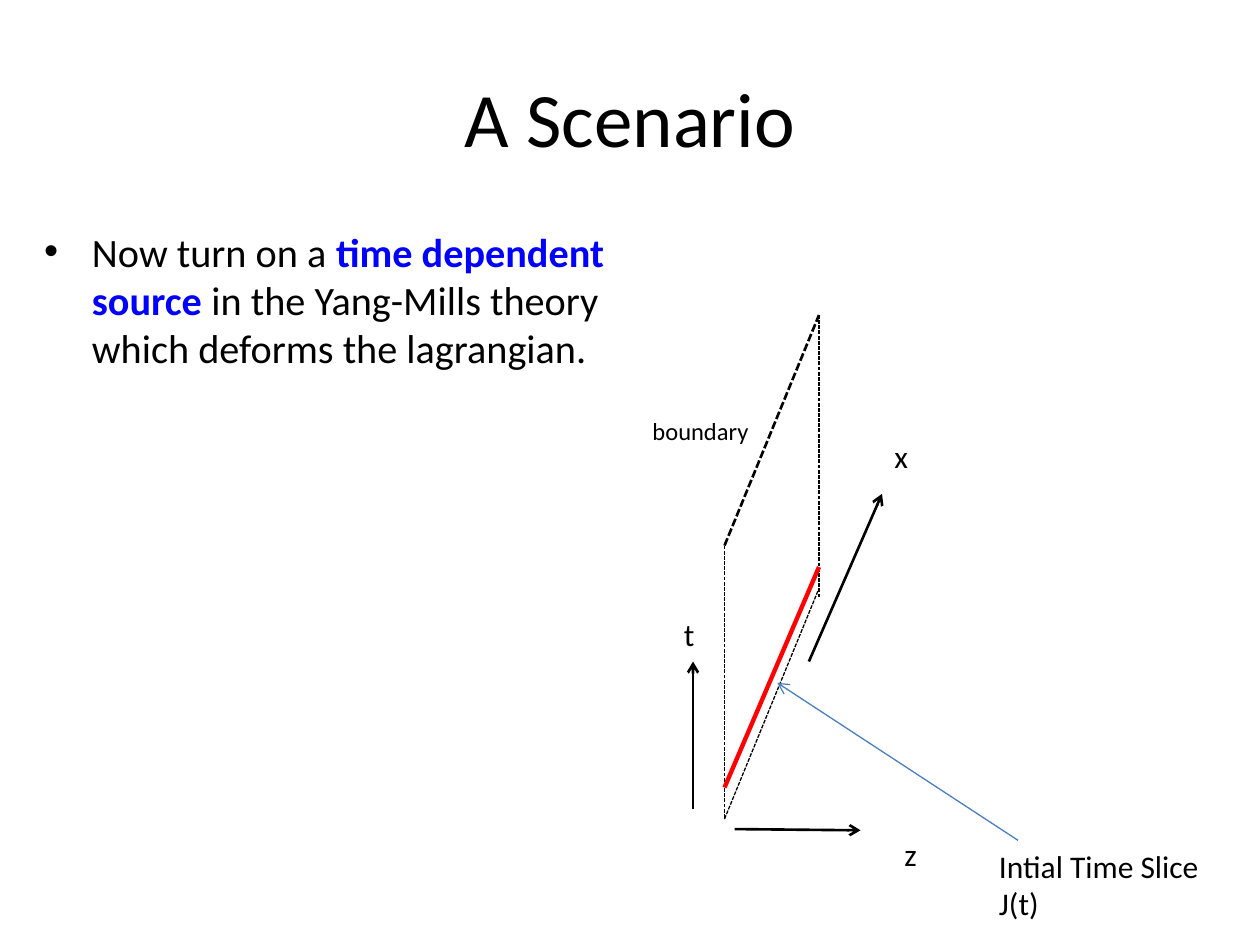
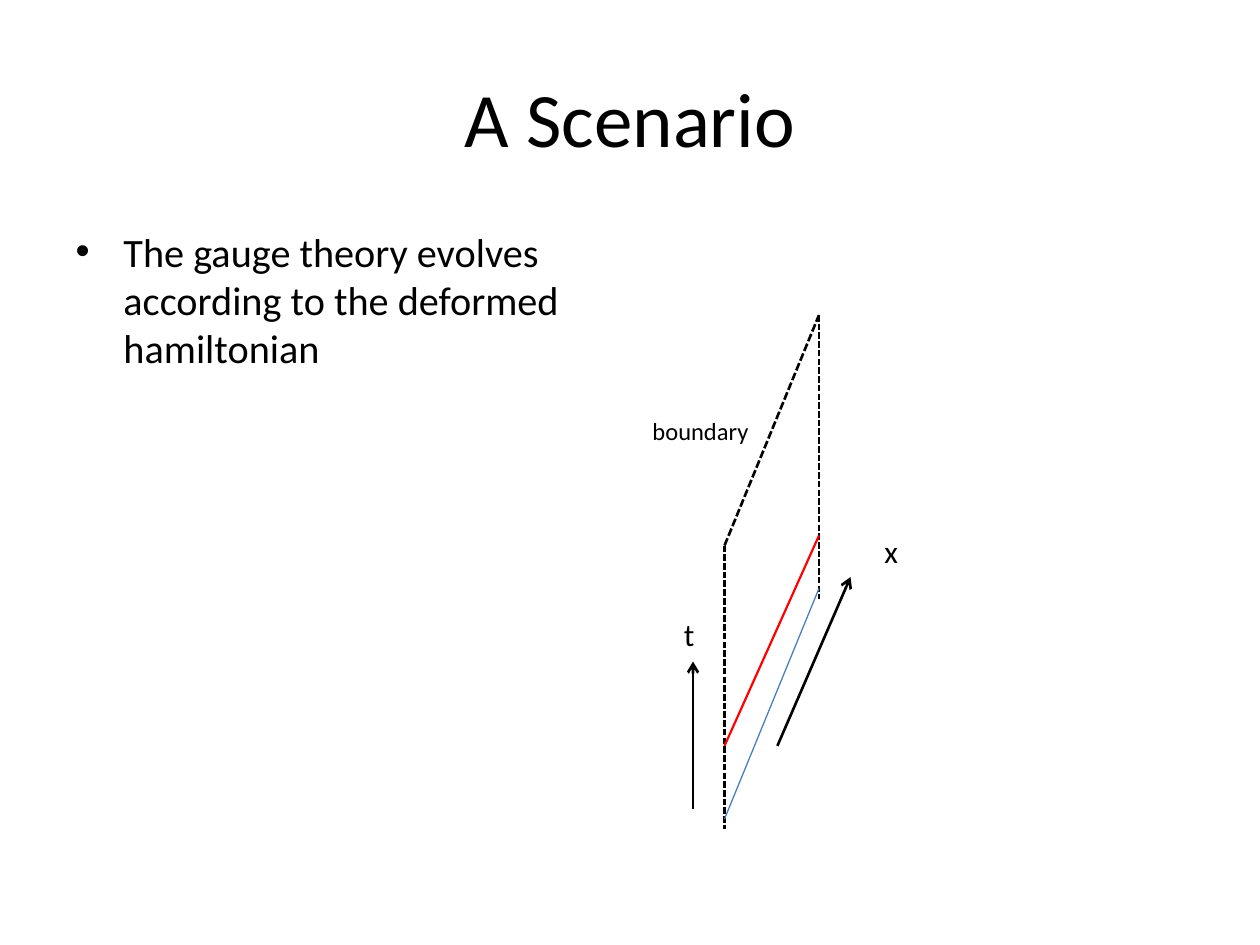
from dataclasses import dataclass

import lxml.etree
import pptx
import pptx.dml.color
import pptx.enum.shapes
import pptx.enum.text
import pptx.oxml.ns
import pptx.util

Inches = pptx.util.Inches


@dataclass(frozen=True)
class Theme:
    font: str = "Calibri"
    black: str = "000000"
    blue: str = "0000FF"
    red: str = "FF0000"
    steel: str = "4B7EBC"
    title_size: int = 44
    body_size: int = 23
    label_size: int = 18
    small_size: int = 14
    thin: float = 0.75
    medium: float = 1.25
    heavy: float = 1.5
    extra: float = 2.5


THEME = Theme()

# Corners of the boundary sheet, in inches
NEAR_TOP, FAR_TOP = (5.75, 4.33), (6.5, 2.5)
NEAR_BOTTOM, FAR_BOTTOM = (5.75, 6.5), (6.5, 4.67)
FAR_EDGE_END = (6.5, 4.75)


def rgb(color):
    return pptx.dml.color.RGBColor.from_string(color)


def add_run(para, text, size, color=THEME.black, bold=False):
    run = para.add_run()
    run.text = text
    run.font.name = THEME.font
    run.font.size = pptx.util.Pt(size)
    run.font.bold = bold
    run.font.color.rgb = rgb(color)


def place(shape, left, top, width, height):
    shape.left, shape.top = Inches(left), Inches(top)
    shape.width, shape.height = Inches(width), Inches(height)


def add_scenario_slide(deck, body_left, body_width, spans):
    """Add a titled slide whose single bullet is made of (text, color, bold) spans."""
    page = deck.slides.add_slide(deck.slide_layouts[1])
    title, body = page.placeholders[0], page.placeholders[1]

    place(title, 0.5, 0.3, 9, 1.25)
    title_para = title.text_frame.paragraphs[0]
    title_para.alignment = pptx.enum.text.PP_ALIGN.CENTER
    add_run(title_para, "A Scenario", THEME.title_size)

    place(body, body_left, 1.75, body_width, 4.95)
    body.text_frame.auto_size = pptx.enum.text.MSO_AUTO_SIZE.NONE
    para = body.text_frame.paragraphs[0]
    indent = Inches(0.38)
    properties = para._p.get_or_add_pPr()
    properties.set("marL", str(indent))
    properties.set("indent", str(-indent))
    for text, color, bold in spans:
        add_run(para, text, THEME.body_size, color, bold)
    return page


def add_label(page, left, top, width, height, *lines, size=THEME.label_size):
    box = page.shapes.add_textbox(*map(Inches, (left, top, width, height)))
    frame = box.text_frame
    frame.word_wrap = False
    frame.auto_size = pptx.enum.text.MSO_AUTO_SIZE.SHAPE_TO_FIT_TEXT
    for index, text in enumerate(lines):
        para = frame.add_paragraph() if index else frame.paragraphs[0]
        add_run(para, text, size)


def add_line(page, start, end, width, color=THEME.black, dashed=False, arrow=False):
    line = page.shapes.add_connector(
        pptx.enum.shapes.MSO_CONNECTOR.STRAIGHT, *map(Inches, (*start, *end)))
    line.line.color.rgb = rgb(color)
    line.line.width = pptx.util.Pt(width)
    qn = pptx.oxml.ns.qn
    outline = line.line._get_or_add_ln()
    if dashed:
        lxml.etree.SubElement(outline, qn("a:prstDash"), val="sysDash")
    if arrow:
        lxml.etree.SubElement(outline, qn("a:tailEnd"), type="arrow")
    lxml.etree.SubElement(line._element.spPr, qn("a:effectLst"))


def add_boundary(page, near_edge_end, edge_width):
    add_line(page, NEAR_TOP, FAR_TOP, THEME.heavy, dashed=True)
    add_line(page, NEAR_TOP, near_edge_end, edge_width, dashed=True)
    add_line(page, FAR_TOP, FAR_EDGE_END, edge_width, dashed=True)
    add_label(page, 5.08, 3.25, 1.02, 0.34, "boundary", size=THEME.small_size)


def add_axis(page, name, start, end, label_left, label_top, label_width=0.33):
    add_line(page, start, end, THEME.heavy, arrow=True)
    add_label(page, label_left, label_top, label_width, 0.4, name)


def add_time_axis(page):
    add_axis(page, "t", (5.5, 6.42), (5.5, 5.25), 5.33, 4.83, 0.27)


def build_source_slide(deck):
    page = add_scenario_slide(deck, 0.25, 4.67, [
        ("Now turn on a ", THEME.black, False),
        ("time dependent source ", THEME.blue, True),
        ("in the Yang-Mills theory which deforms the lagrangian.", THEME.black, False),
    ])
    add_boundary(page, NEAR_BOTTOM, THEME.thin)
    add_line(page, NEAR_BOTTOM, FAR_BOTTOM, THEME.thin, dashed=True)
    add_time_axis(page)
    add_axis(page, "x", (6.42, 5.25), (7, 3.92), 7, 3.42)
    add_axis(page, "z", (5.83, 6.58), (6.83, 6.59), 7.08, 6.58)
    add_line(page, (5.75, 6.25), (6.5, 4.5), THEME.extra, THEME.red)
    add_label(page, 7.83, 6.67, 1.81, 0.71, "Intial Time Slice", "J(t)")
    add_line(page, (8.08, 6.67), (6.17, 5.42), THEME.thin, THEME.steel, arrow=True)


def build_evolution_slide(deck):
    page = add_scenario_slide(deck, 0.5, 4.42, [
        ("The gauge theory evolves according to the deformed hamiltonian",
         THEME.black, False),
    ])
    add_boundary(page, (5.75, 6.58), THEME.medium)
    add_line(page, NEAR_BOTTOM, FAR_BOTTOM, THEME.thin, THEME.steel)
    add_time_axis(page)
    add_axis(page, "x", (6.17, 5.92), (6.75, 4.58), 6.92, 4.17)
    add_line(page, (5.75, 5.92), (6.5, 4.25), THEME.medium, THEME.red)


def main():
    deck = pptx.Presentation()
    deck.slide_width, deck.slide_height = Inches(10), Inches(7.5)
    build_source_slide(deck)
    build_evolution_slide(deck)
    deck.save("out.pptx")


if __name__ == "__main__":
    main()
